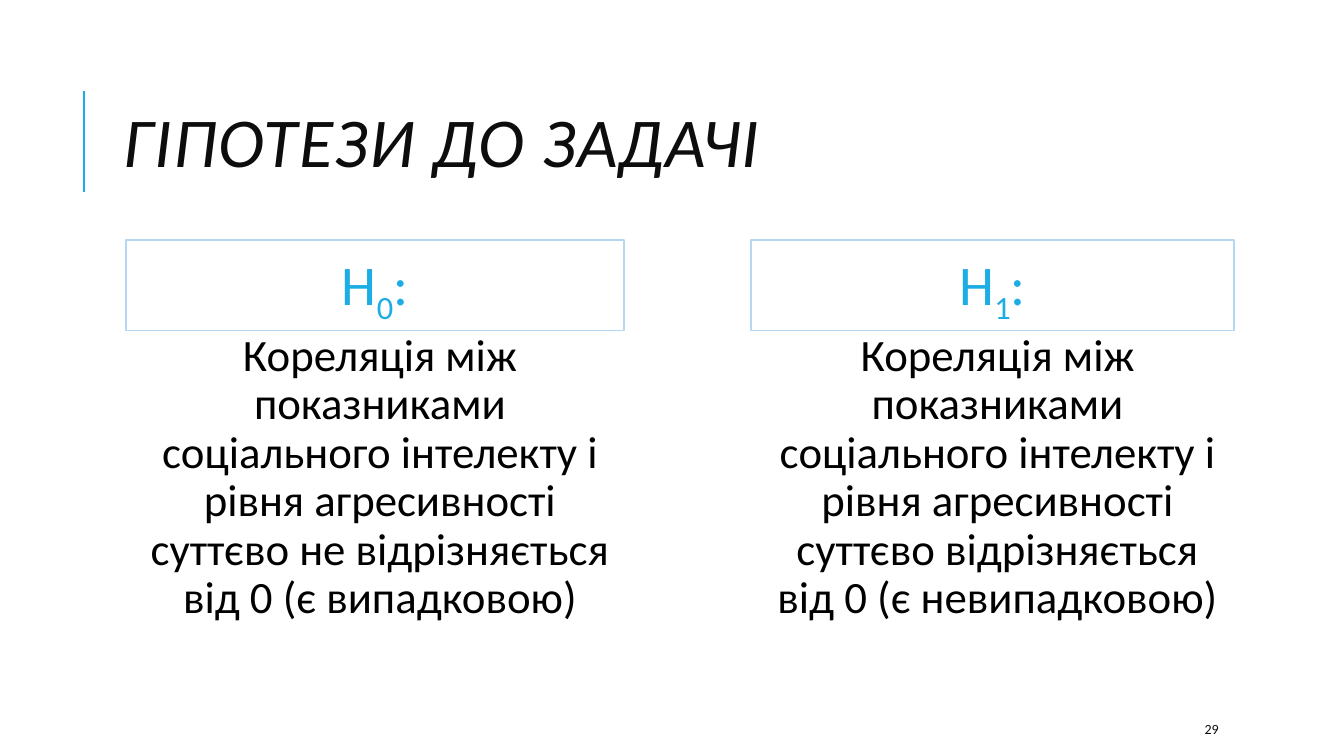
from lxml.etree import SubElement
from pptx import Presentation
from pptx.dml.color import RGBColor
from pptx.enum.shapes import MSO_CONNECTOR
from pptx.enum.text import MSO_ANCHOR, MSO_AUTO_SIZE, PP_ALIGN
from pptx.oxml.ns import qn
from pptx.util import Inches, Pt

ACCENT = RGBColor(0x1C, 0xAD, 0xE4)
BORDER = RGBColor(0xB5, 0xD7, 0xF1)
INK = RGBColor(0x0D, 0x0D, 0x0D)
BLACK = RGBColor(0, 0, 0)
FONT = "Calibri"
HYPOTHESES = [
    (1.25, 4.94, "0", "Кореляція між показниками соціального інтелекту і рівня "
     "агресивності суттєво не відрізняється від 0 (є випадковою)"),
    (7.45, 4.79, "1", "Кореляція між показниками соціального інтелекту і рівня "
     "агресивності суттєво відрізняється від 0 (є невипадковою)"),
]


def place(shape, left, top, width, height):
    """Move a shape to a box given in inches."""
    shape.left, shape.top = Inches(left), Inches(top)
    shape.width, shape.height = Inches(width), Inches(height)


def set_frame(shape, anchor, side=0.1):
    """Set the wrapping, anchor and insets of a shape's text."""
    frame = shape.text_frame
    frame.word_wrap = True
    frame.auto_size = MSO_AUTO_SIZE.NONE
    frame.vertical_anchor = anchor
    frame.margin_left = frame.margin_right = Inches(side)
    frame.margin_top = frame.margin_bottom = Inches(0.05)


def style_span(span, size, color, italic=False):
    """Set the font of one run."""
    span.font.name = FONT
    span.font.size = Pt(size)
    span.font.color.rgb = color
    span.font.bold = False
    span.font.italic = italic


def format_para(para, margin=0):
    """Centre a paragraph without a bullet, indented by a margin in inches."""
    properties = para._p.get_or_add_pPr()
    properties.set("marL", str(Inches(margin)))
    properties.set("indent", "0")
    SubElement(properties, qn("a:buNone"))
    para.alignment = PP_ALIGN.CENTER
    para.line_spacing = 0.9
    para.space_before = Pt(0)


def add_heading(page, left, top, width, height):
    """Fill the title and draw the accent line to its left."""
    title = page.shapes.title
    place(title, left, top, width, height)
    set_frame(title, MSO_ANCHOR.MIDDLE)
    title.text_frame.text = "ГІПОТЕЗИ ДО ЗАДАЧІ"
    para = title.text_frame.paragraphs[0]
    para.alignment = PP_ALIGN.LEFT
    para.line_spacing = 0.8
    span = para.runs[0]
    style_span(span, 50, INK, italic=True)
    span.font._element.set("spc", "100")
    line_left = Inches(left - 0.29)
    line = page.shapes.add_connector(
        MSO_CONNECTOR.STRAIGHT, line_left, Inches(top + 1.26), line_left, Inches(top + 0.26))
    line.line.color.rgb = ACCENT
    line.line.width = Pt(1.5)
    SubElement(line._element.spPr, qn("a:effectLst"))


def fill_hypothesis(label, body, left, top, width, index, statement):
    """Fill a framed hypothesis label and the statement below it."""
    place(label, left, top, width, 0.9)
    label.line.color.rgb = BORDER
    label.line.width = Pt(1.25)
    set_frame(label, MSO_ANCHOR.MIDDLE, 0.15)
    para = label.text_frame.paragraphs[0]
    format_para(para)
    for text in ("Н", index, ":"):
        span = para.add_run()
        span.text = text
        style_span(span, 40, ACCENT)
    para.runs[1].font._element.set("baseline", "-25000")

    place(body, left, top + 0.87, width, 3.65)
    set_frame(body, MSO_ANCHOR.TOP, 0.05)
    body.text_frame.text = statement
    para = body.text_frame.paragraphs[0]
    format_para(para, 0.1)
    para.space_after = Pt(2)
    style_span(para.runs[0], 32, BLACK)


def add_page_number(page, left, top, width, height):
    """Write the page number."""
    box = page.shapes.add_textbox(Inches(left), Inches(top), Inches(width), Inches(height))
    set_frame(box, MSO_ANCHOR.MIDDLE)
    box.text_frame.text = "29"
    style_span(box.text_frame.paragraphs[0].runs[0], 10, INK)


def main():
    """Build and save the deck."""
    deck = Presentation()
    deck.slide_width, deck.slide_height = Inches(13.33), Inches(7.5)
    page = deck.slides.add_slide(deck.slide_layouts.get_by_name("Comparison"))
    add_heading(page, 1.12, 0.64, 10.63, 1.64)
    for column, (left, width, index, statement) in enumerate(HYPOTHESES):
        label = page.placeholders[2 * column + 1]
        body = page.placeholders[2 * column + 2]
        fill_hypothesis(label, body, left, 2.38, width, index, statement)
    add_page_number(page, 11.85, 7.08, 1.06, 0.3)
    deck.save("out.pptx")


if __name__ == "__main__":
    main()
